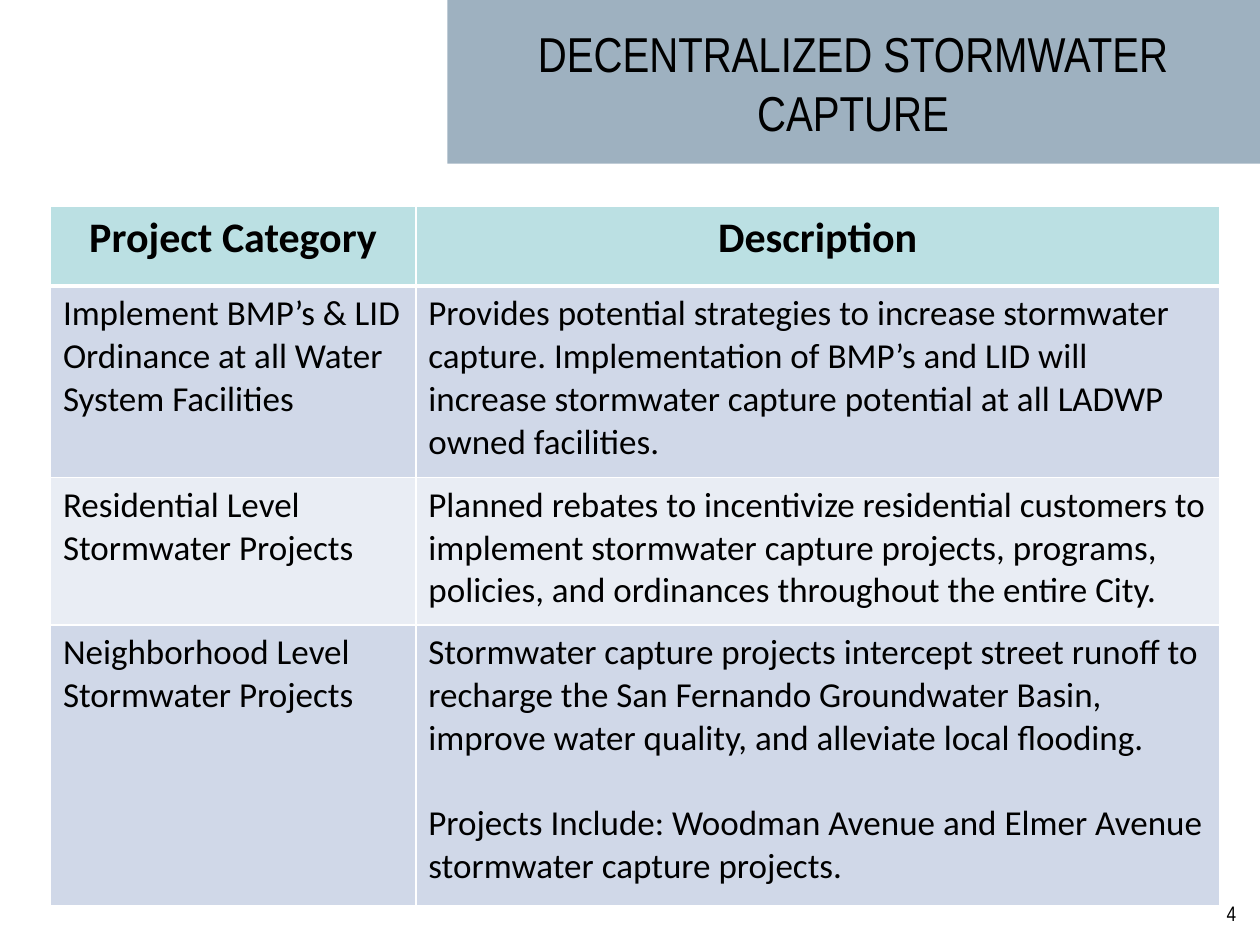
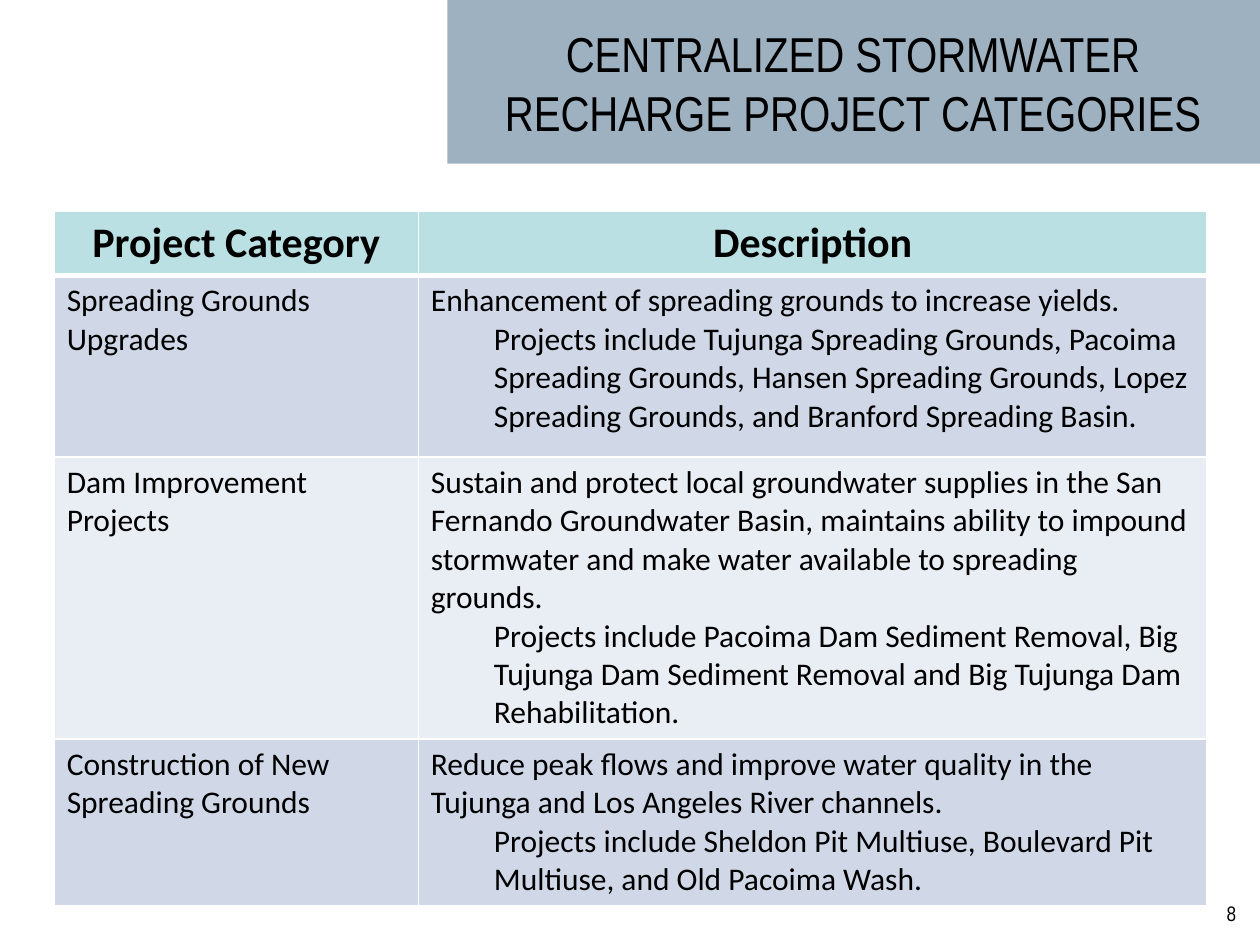
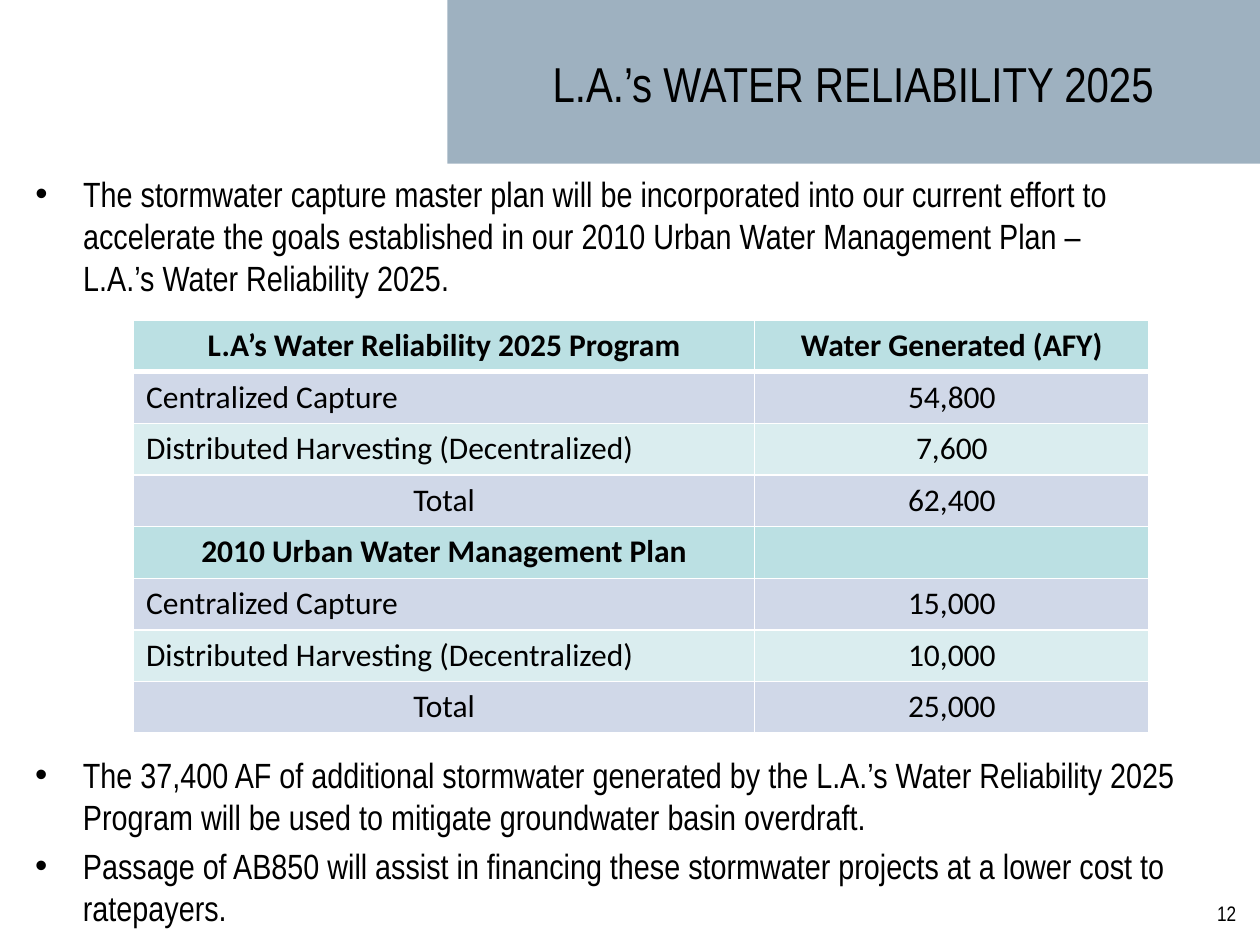
from dataclasses import dataclass

from lxml import etree
from pptx import Presentation
from pptx.dml.color import RGBColor
from pptx.enum.shapes import MSO_SHAPE
from pptx.enum.text import MSO_ANCHOR, MSO_AUTO_SIZE, PP_ALIGN
from pptx.oxml.ns import qn
from pptx.util import Inches, Pt

LEFT, CENTER, RIGHT = PP_ALIGN.LEFT, PP_ALIGN.CENTER, PP_ALIGN.RIGHT
TOP, MIDDLE, BOTTOM = MSO_ANCHOR.TOP, MSO_ANCHOR.MIDDLE, MSO_ANCHOR.BOTTOM
NO_FIT = MSO_AUTO_SIZE.NONE
RECTANGLE = MSO_SHAPE.RECTANGLE

# Shared style
NAVY, BLACK, WHITE = "0D3D63", "000000", "FFFFFF"
TEAL, PALE_TEAL = "BBE0E3", "DAEDEF"
BLUE, PALE_BLUE = "D0D8E8", "E9EDF4"
SLIDE_FONT, TABLE_FONT = "Arial Narrow", "Calibri"
BAND_OPACITY = 40


def color(hex_string):
    return RGBColor.from_string(hex_string)


@dataclass
class Para:
    text: str
    align: PP_ALIGN = LEFT
    bold: bool = False
    indent: float = 0
    gap: float = 0


@dataclass
class Row:
    height: float
    fill: str
    cells: list


class Deck:
    def __init__(self):
        self.deck = Presentation()
        self.deck.slide_width, self.deck.slide_height = Inches(10), Inches(7.5)
        self.page = None

    def add_page(self, title, number):
        self.page = self.deck.slides.add_slide(self.deck.slide_layouts[0])
        self.band()
        self.place(self.page.shapes.title, 3.54, 0, 6.46, 1.31)
        self.set_text(self.page.shapes.title.text_frame, [Para(title, CENTER)], 28,
                      anchor=MIDDLE)
        box = self.page.shapes.add_textbox(
            Inches(7.58), Inches(7.1), Inches(2.33), Inches(0.52))
        self.set_text(box.text_frame, [Para(str(number), RIGHT)], 12)

    def band(self):
        band = self.page.shapes.add_shape(
            RECTANGLE, Inches(3.55), 0, Inches(6.45), Inches(1.3))
        band.shadow.inherit = False
        band.line.fill.background()
        band.fill.solid()
        band.fill.fore_color.rgb = color(NAVY)
        tone = band._element.spPr.find(qn("a:solidFill"))[0]
        etree.SubElement(tone, qn("a:alpha"), val=str(BAND_OPACITY * 1000))
        # Send the band behind the title
        self.page.shapes._spTree.insert(2, band._element)

    def place(self, shape, left, top, width, height):
        shape.left, shape.top = Inches(left), Inches(top)
        shape.width, shape.height = Inches(width), Inches(height)

    def set_text(self, frame, paras, size, anchor=TOP, bullets=False):
        frame.word_wrap = True
        frame.auto_size = NO_FIT
        frame.vertical_anchor = anchor
        self.fill_paragraphs(frame, paras, size, SLIDE_FONT, bullets)

    def fill_paragraphs(self, frame, paras, size, font, bullets=False):
        for index, para in enumerate(paras):
            paragraph = frame.paragraphs[0] if index == 0 else frame.add_paragraph()
            paragraph.text = para.text
            paragraph.alignment = para.align
            paragraph.space_before = Pt(para.gap)
            if para.indent:
                paragraph._p.get_or_add_pPr().set("marL", str(Inches(para.indent)))
            if bullets:
                self.bullet(paragraph)
            paragraph.font.name = font
            paragraph.font.size = Pt(size)
            paragraph.font.bold = para.bold
            paragraph.font.color.rgb = color(BLACK)

    def bullet(self, paragraph):
        properties = paragraph._p.get_or_add_pPr()
        properties.set("marL", str(Inches(0.38)))
        properties.set("indent", str(-Inches(0.38)))
        etree.SubElement(properties, qn("a:buFont"), typeface="Arial")
        etree.SubElement(properties, qn("a:buChar"), char="•")

    def body(self, paras, left, top, width, height):
        shape = self.page.placeholders[1]
        self.place(shape, left, top, width, height)
        self.set_text(shape.text_frame, paras, 20, bullets=True)

    def bullet_box(self, paras, left, top, width, height):
        box = self.page.shapes.add_textbox(
            Inches(left), Inches(top), Inches(width), Inches(height))
        self.set_text(box.text_frame, paras, 20, bullets=True)

    def drop_body(self):
        body = self.page.placeholders[1]._element
        body.getparent().remove(body)

    def table(self, left, top, widths, rows, size, header_size, header_anchor=TOP):
        table = self.page.shapes.add_table(
            len(rows), len(widths), Inches(left), Inches(top), Inches(sum(widths)),
            Inches(sum(row.height for row in rows))).table
        table.first_row = table.horz_banding = False
        for column, width in zip(table.columns, widths):
            column.width = Inches(width)
        for index, row in enumerate(rows):
            table.rows[index].height = Inches(row.height)
            header = index == 0
            for cell, paras in zip(table.rows[index].cells, row.cells):
                self.borders(cell, top=3 if index == 1 else 1, bottom=3 if header else 1)
                cell.fill.solid()
                cell.fill.fore_color.rgb = color(row.fill)
                cell.vertical_anchor = header_anchor if header else TOP
                self.fill_paragraphs(cell.text_frame, paras,
                                     header_size if header else size, TABLE_FONT)

    def borders(self, cell, top, bottom):
        properties = cell._tc.get_or_add_tcPr()
        for side, width in (("L", 1), ("R", 1), ("T", top), ("B", bottom)):
            line = etree.SubElement(properties, qn(f"a:ln{side}"), w=str(Pt(width)))
            fill = etree.SubElement(line, qn("a:solidFill"))
            etree.SubElement(fill, qn("a:srgbClr"), val=WHITE)


def heading_row(height, *labels):
    return Row(height, TEAL, [[Para(label, CENTER, bold=True)] for label in labels])


def category_row(height, fill, category, *description):
    return Row(height, fill, [[Para(category)], list(description)])


def amount_row(fill, label, amount, align=LEFT):
    return Row(0.41, fill, [[Para(label, align)], [Para(amount, CENTER)]])


def amount_rows(centralized, distributed, total):
    return [
        amount_row(BLUE, "Centralized Capture", centralized),
        amount_row(PALE_TEAL, "Distributed Harvesting (Decentralized)", distributed),
        amount_row(BLUE, "Total", total, CENTER),
    ]


def main():
    deck = Deck()

    # Decentralized capture
    deck.add_page("DECENTRALIZED STORMWATER CAPTURE", 4)
    deck.drop_body()
    deck.table(0.4, 1.64, [2.9, 6.38], [
        heading_row(0.63, "Project Category", "Description"),
        category_row(
            1.52, BLUE, "Implement BMP’s & LID Ordinance at all Water System Facilities",
            Para("Provides potential strategies to increase stormwater capture. "
                 "Implementation of BMP’s and LID will increase stormwater capture "
                 "potential at all LADWP owned facilities.")),
        category_row(
            1.17, PALE_BLUE, "Residential Level Stormwater Projects",
            Para("Planned rebates to incentivize residential customers to implement "
                 "stormwater capture projects, programs, policies, and ordinances "
                 "throughout the entire City.")),
        category_row(
            2.23, BLUE, "Neighborhood Level Stormwater Projects",
            Para("Stormwater capture projects intercept street runoff to recharge the San "
                 "Fernando Groundwater Basin, improve water quality, and alleviate local "
                 "flooding."),
            Para("Projects Include: Woodman Avenue and Elmer Avenue stormwater capture "
                 "projects.", gap=24.4)),
    ], size=20, header_size=24)

    # Centralized recharge
    deck.add_page("CENTRALIZED STORMWATER RECHARGE PROJECT CATEGORIES", 8)
    deck.drop_body()
    deck.table(0.43, 1.68, [2.89, 6.26], [
        heading_row(0.5, "Project Category", "Description"),
        category_row(
            1.44, BLUE, "Spreading Grounds Upgrades",
            Para("Enhancement of spreading grounds to increase yields."),
            Para("Projects include Tujunga Spreading Grounds, Pacoima Spreading Grounds, "
                 "Hansen Spreading Grounds, Lopez Spreading Grounds, and Branford "
                 "Spreading Basin.", indent=0.5)),
        category_row(
            2.24, PALE_BLUE, "Dam Improvement Projects",
            Para("Sustain and protect local groundwater supplies in the San Fernando "
                 "Groundwater Basin, maintains ability to impound stormwater and make "
                 "water available to spreading grounds."),
            Para("Projects include Pacoima Dam Sediment Removal, Big Tujunga Dam Sediment "
                 "Removal and Big Tujunga Dam Rehabilitation.", indent=0.5)),
        category_row(
            1.31, BLUE, "Construction of New Spreading Grounds",
            Para("Reduce peak flows and improve water quality in the Tujunga and Los "
                 "Angeles River channels."),
            Para("Projects include Sheldon Pit Multiuse, Boulevard Pit Multiuse, and Old "
                 "Pacoima Wash.", indent=0.5)),
    ], size=18, header_size=24, header_anchor=BOTTOM)

    # Water reliability
    deck.add_page("L.A.’s WATER RELIABILITY 2025", 12)
    deck.body([
        Para("The stormwater capture master plan will be incorporated into our current "
             "effort to accelerate the goals established in our 2010 Urban Water "
             "Management Plan – L.A.’s Water Reliability 2025."),
    ], 0.18, 1.32, 9.12, 1.28)
    deck.table(1.06, 2.54, [4.93, 3.13], [
        heading_row(0.41, "L.A’s Water Reliability 2025 Program", "Water Generated (AFY)"),
        *amount_rows("54,800", "7,600", "62,400"),
        heading_row(0.41, "2010 Urban Water Management Plan", ""),
        *amount_rows("15,000", "10,000", "25,000"),
    ], size=18, header_size=18, header_anchor=BOTTOM)
    deck.bullet_box([
        Para("The 37,400 AF of additional stormwater generated by the L.A.’s Water "
             "Reliability 2025 Program will be used to mitigate groundwater basin "
             "overdraft."),
        Para("Passage of AB850 will assist in financing these stormwater projects at a "
             "lower cost to ratepayers.", gap=4),
    ], 0.18, 5.93, 9.82, 1.28)

    deck.deck.save("out.pptx")


if __name__ == "__main__":
    main()
